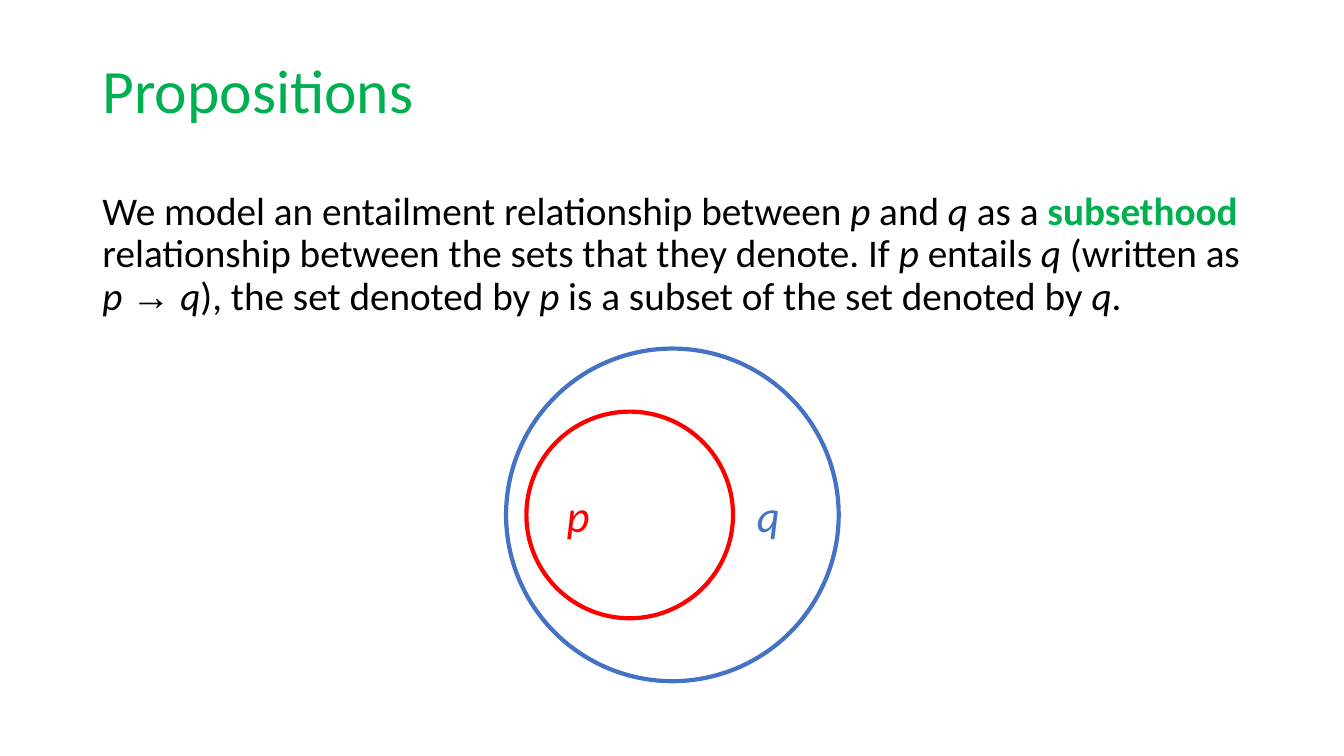
import pptx
import pptx.util
import pptx.dml.color
import pptx.enum.shapes
import pptx.enum.text
import pptx.oxml

Pt = pptx.util.Pt
ALIGN = pptx.enum.text.PP_ALIGN
ANCHOR = pptx.enum.text.MSO_ANCHOR

COLORS = {"green": "00B050", "black": "000000", "red": "FF0000", "blue": "4472C4"}

ITALIC = {"italic": True}
TITLE = [("Propositions", {"color": "green"})]
BODY = [
    ("We model an entailment relationship between ", {}),
    ("p", ITALIC),
    (" and ", {}),
    ("q", ITALIC),
    (" as a ", {}),
    ("subsethood", {"color": "green", "bold": True}),
    (" relationship between the sets that they denote. If ", {}),
    ("p", ITALIC),
    (" entails ", {}),
    ("q ", ITALIC),
    ("(written as ", {}),
    ("p ", ITALIC),
    ("→ ", {"font": "Times New Roman"}),
    ("q", ITALIC),
    ("), the set denoted by ", {}),
    ("p", ITALIC),
    (" is a subset of the set denoted by ", {}),
    ("q", ITALIC),
    (".", {}),
]
# name, left, diameter, color, alignment
SETS = [
    ("p", 376, 147.6, "red", ALIGN.LEFT),
    ("q", 361.5, 237.6, "blue", ALIGN.RIGHT),
]

PAGE_WIDTH, PAGE_HEIGHT = 960, 540
MARGIN = 66
TITLE_HEIGHT, BODY_HEIGHT = 133.2, 353.5
SETS_MIDDLE = 367.8


def rgb(name):
    return pptx.dml.color.RGBColor.from_string(COLORS[name])


def place(box, left, top, width, height):
    box.left, box.top, box.width, box.height = Pt(left), Pt(top), Pt(width), Pt(height)


def add_span(para, text, size, color="black", font="Calibri", bold=False, italic=False):
    span = para.add_run()
    span.text = text
    span.font.size = Pt(size)
    span.font.name = font
    span.font.bold = bold
    span.font.italic = italic
    span.font.color.rgb = rgb(color)


def fill_text(box, spans, size, anchor, align=ALIGN.LEFT, line_spacing=1.0, space_before=0):
    frame = box.text_frame
    frame.word_wrap = True
    frame.auto_size = pptx.enum.text.MSO_AUTO_SIZE.NONE
    frame.vertical_anchor = anchor
    para = frame.paragraphs[0]
    para.alignment = align
    para.line_spacing = line_spacing
    para.space_before = Pt(space_before)
    for text, style in spans:
        add_span(para, text, size, **style)
    return para


def remove_bullet(para):
    properties = para._p.get_or_add_pPr()
    properties.set("marL", "0")
    properties.set("indent", "0")
    properties.append(pptx.oxml.parse_xml(
        '<a:buNone xmlns:a="http://schemas.openxmlformats.org/drawingml/2006/main"/>'))


def add_set(group, name, left, diameter, color, align):
    circle = group.shapes.add_shape(
        pptx.enum.shapes.MSO_SHAPE.OVAL,
        Pt(left), Pt(SETS_MIDDLE - diameter / 2), Pt(diameter), Pt(diameter))
    circle.shadow.inherit = False
    circle.fill.background()
    circle.line.color.rgb = rgb(color)
    circle.line.width = Pt(3)
    fill_text(circle, [(name, {"color": color, "italic": True})], 32, ANCHOR.MIDDLE, align)


def main():
    deck = pptx.Presentation()
    deck.slide_width, deck.slide_height = Pt(PAGE_WIDTH), Pt(PAGE_HEIGHT)
    page = deck.slides.add_slide(deck.slide_layouts[1])
    width = PAGE_WIDTH - 2 * MARGIN

    title, body = page.shapes.title, page.placeholders[1]
    place(title, MARGIN, 0, width, TITLE_HEIGHT)
    fill_text(title, TITLE, 44, ANCHOR.MIDDLE, line_spacing=0.9)
    place(body, MARGIN, TITLE_HEIGHT, width, BODY_HEIGHT)
    para = fill_text(body, BODY, 28, ANCHOR.TOP, line_spacing=0.9, space_before=10)
    remove_bullet(para)

    group = page.shapes.add_group_shape()
    for entry in SETS:
        add_set(group, *entry)
    deck.save("out.pptx")


if __name__ == "__main__":
    main()
